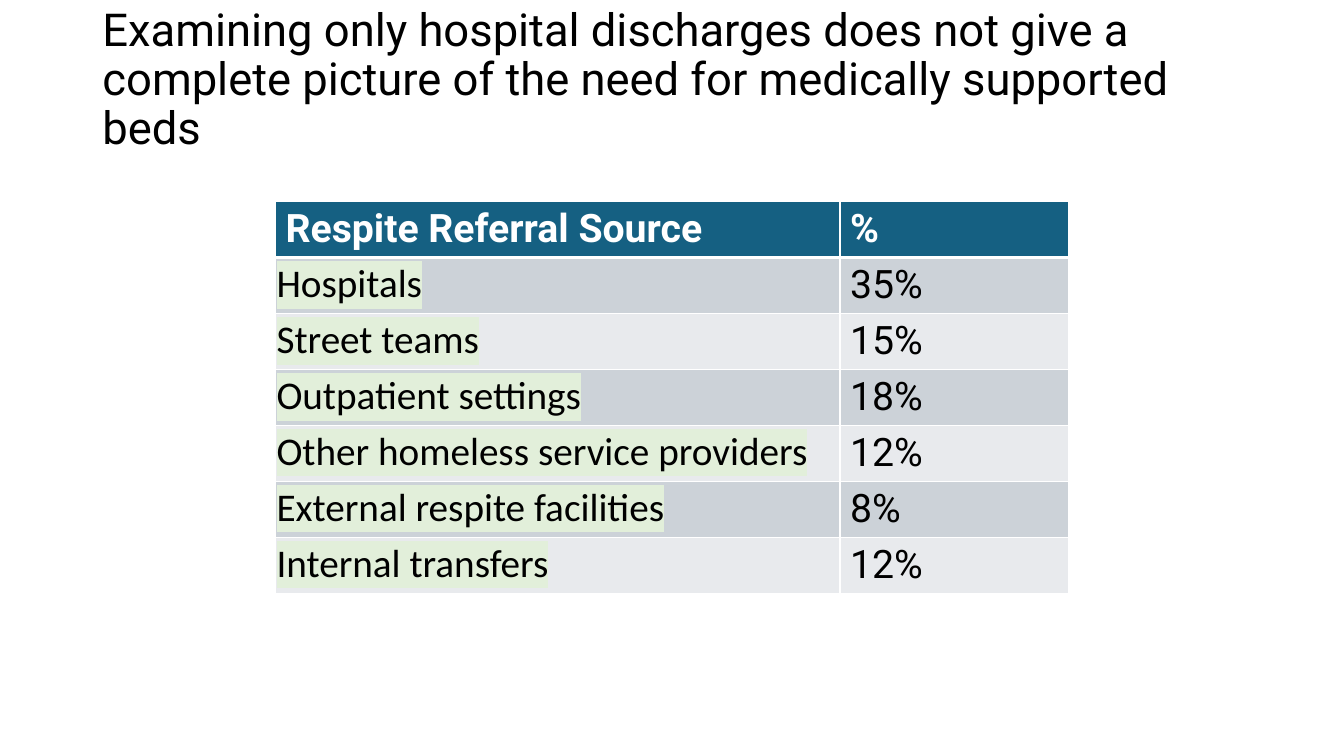
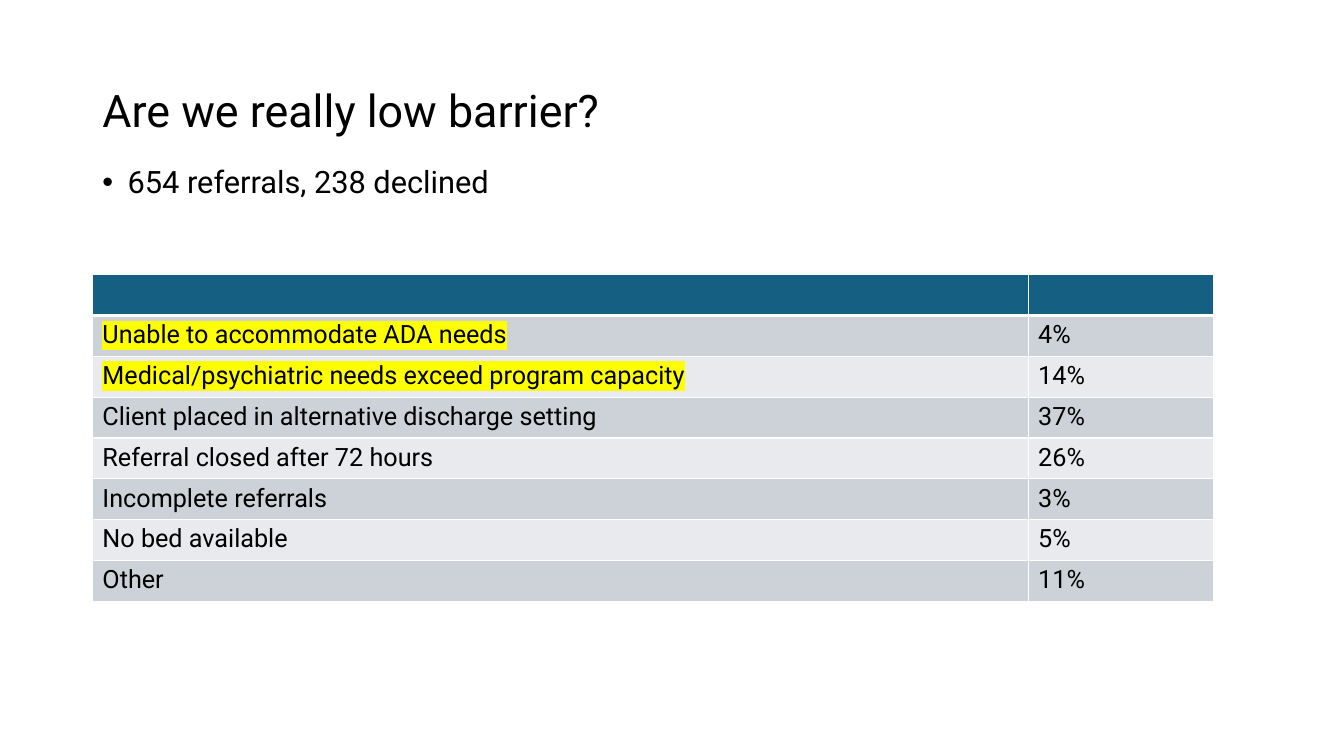
from pptx import Presentation
from pptx.dml.color import RGBColor
from pptx.enum.text import MSO_ANCHOR, MSO_AUTO_SIZE, PP_ALIGN
from pptx.oxml.ns import qn
from pptx.util import Inches, Pt
from lxml.etree import SubElement

COLORS = {
    "text": "000000",
    "white": "FFFFFF",
    "header": "156082",
    "odd_row": "CCD2D8",
    "even_row": "E8EAED",
    "green_mark": "E2EFDA",
    "yellow_mark": "FFFF00",
}
FONT = "Roboto"

deck = Presentation()
deck.slide_width, deck.slide_height = Inches(13.333), Inches(7.5)

# The slide is a grid of 160 columns and 90 rows of square units
UNIT = deck.slide_height / 90
MARGIN, CONTENT_WIDTH = 11, 138

slides = [
    {
        "title": "Examining only hospital discharges does not give a complete "
                 "picture of the need for medically supported beds",
        "title_size": 32.4,
        "title_lift": 7.8,
        "bullet": None,
        "left": 32.8, "top": 24, "columns": (67.2, 27.2), "row": 6.65,
        "size": 28, "label_font": "Calibri", "tight_labels": True,
        "mark": "green_mark", "marked_rows": range(1, 7),
        "rows": [
            ("Respite Referral Source", "%"),
            ("Hospitals", "35%"),
            ("Street teams", "15%"),
            ("Outpatient settings", "18%"),
            ("Other homeless service providers", "12%"),
            ("External respite facilities", "8%"),
            ("Internal transfers", "12%"),
        ],
    },
    {
        "title": "Are we really low barrier?",
        "title_size": 32,
        "title_lift": 0,
        "bullet": "654 referrals, 238 declined",
        "left": MARGIN, "top": 32.7, "columns": (111.4, 22.1), "row": 4.86,
        "size": 18, "label_font": FONT, "tight_labels": False,
        "mark": "yellow_mark", "marked_rows": range(1, 3),
        "rows": [
            ("", ""),
            ("Unable to accommodate ADA needs", "4%"),
            ("Medical/psychiatric needs exceed program capacity", "14%"),
            ("Client placed in alternative discharge setting", "37%"),
            ("Referral closed after 72 hours", "26%"),
            ("Incomplete referrals", "3%"),
            ("No bed available", "5%"),
            ("Other", "11%"),
        ],
    },
]


def write(paragraph, text, size, font=FONT, color="text", bold=False, mark=None):
    """Add one formatted run, highlighted if a mark colour is named."""
    run = paragraph.add_run()
    run.text = text
    run.font.size, run.font.bold = Pt(size), bold
    run.font.color.rgb = RGBColor.from_string(COLORS[color])
    run.font.name = font
    if mark:
        properties = run.font._element
        highlight = SubElement(properties, qn("a:highlight"))
        SubElement(highlight, qn("a:srgbClr"), val=COLORS[mark])
        properties.find(qn("a:solidFill")).addnext(highlight)


def place(placeholder, top, height, anchor):
    """Move a placeholder into the content column; return its first paragraph."""
    placeholder.left, placeholder.top = int(MARGIN * UNIT), int(top * UNIT)
    placeholder.width, placeholder.height = int(CONTENT_WIDTH * UNIT), int(height * UNIT)
    frame = placeholder.text_frame
    frame.auto_size, frame.vertical_anchor = MSO_AUTO_SIZE.NONE, anchor
    paragraph = frame.paragraphs[0]
    paragraph.alignment, paragraph.line_spacing = PP_ALIGN.LEFT, 0.9
    paragraph.space_before = Pt(0)
    return paragraph


for content in slides:
    # Title, lifted by a deeper bottom inset where it is long
    layout = deck.slide_layouts[1 if content["bullet"] else 5]
    slide = deck.slides.add_slide(layout)
    heading = place(slide.shapes.title, 4.8, 17.4, MSO_ANCHOR.MIDDLE)
    slide.shapes.title.text_frame.margin_bottom = int(Inches(0.05) + content["title_lift"] * UNIT)
    write(heading, content["title"], content["title_size"])

    # Bulleted list
    if content["bullet"]:
        item = place(slide.placeholders[1], 19.3, 57.1, MSO_ANCHOR.TOP)
        indents = item._p.get_or_add_pPr()
        indents.set("marL", str(Inches(0.25)))
        indents.set("indent", str(-Inches(0.25)))
        SubElement(indents, qn("a:buChar"), char="•")
        write(item, content["bullet"], 22)

    # Table
    rows, columns = content["rows"], content["columns"]
    table = slide.shapes.add_table(
        len(rows), len(columns),
        int(content["left"] * UNIT), int(content["top"] * UNIT),
        int(sum(columns) * UNIT), int(len(rows) * content["row"] * UNIT)).table
    for column, width in zip(table.columns, columns):
        column.width = int(width * UNIT)

    for r, values in enumerate(rows):
        table.rows[r].height = int(content["row"] * UNIT)
        is_header = r == 0
        fill = "header" if is_header else ("even_row", "odd_row")[r % 2]
        for c, value in enumerate(values):
            cell = table.cell(r, c)
            is_label = c == 0 and not is_header

            # White borders, heavier below the header
            for side in "LRTB":
                heavy = (r, side) in ((0, "B"), (1, "T"))
                border = SubElement(cell._tc.get_or_add_tcPr(), qn(f"a:ln{side}"),
                                    w=str(Pt(3 if heavy else 1)))
                SubElement(SubElement(border, qn("a:solidFill")),
                           qn("a:srgbClr"), val=COLORS["white"])
            cell.fill.solid()
            cell.fill.fore_color.rgb = RGBColor.from_string(COLORS[fill])

            if is_label and content["tight_labels"]:
                cell.margin_left = cell.margin_right = cell.margin_top = Inches(0.01)
                cell.vertical_anchor = MSO_ANCHOR.BOTTOM
            if value:
                write(cell.text_frame.paragraphs[0], value, content["size"],
                      font=content["label_font"] if is_label else FONT,
                      color="white" if is_header else "text", bold=is_header,
                      mark=content["mark"] if is_label and r in content["marked_rows"] else None)

deck.save("out.pptx")
